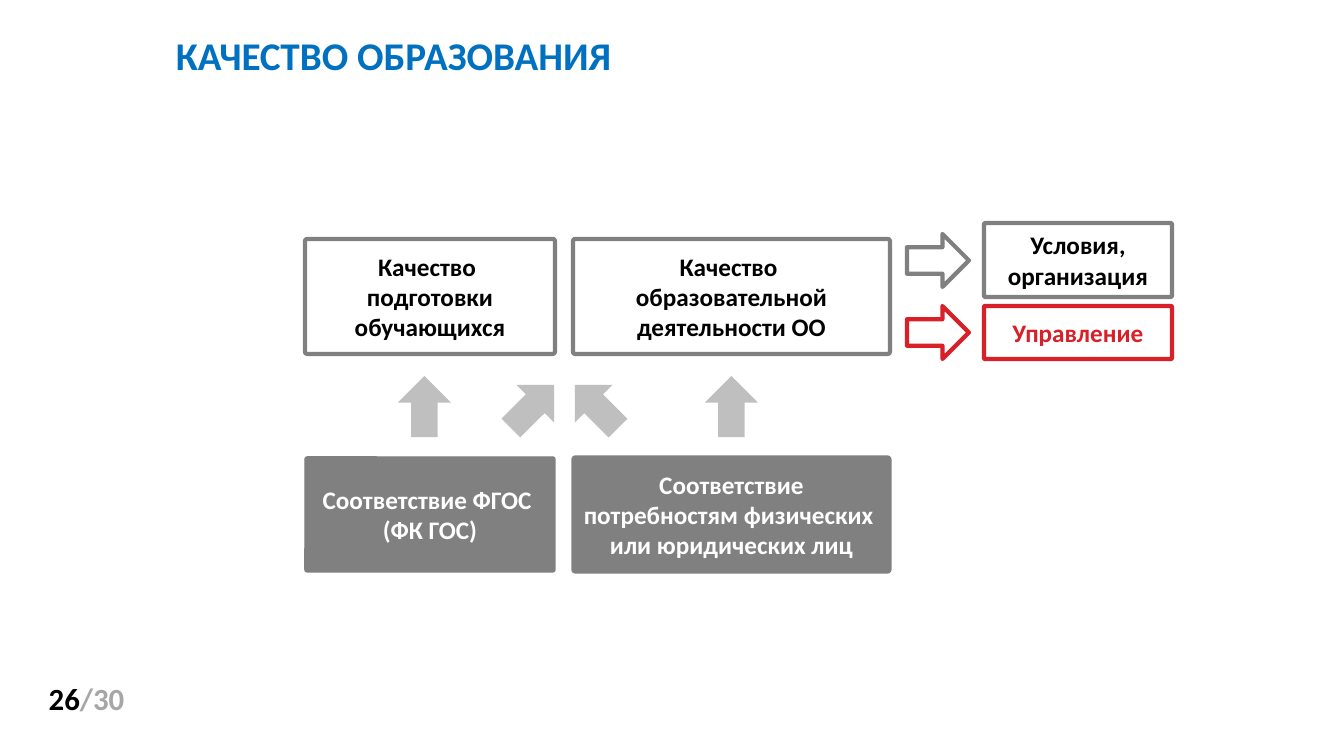
from pptx import Presentation
from pptx.dml.color import RGBColor
from pptx.enum.shapes import MSO_SHAPE
from pptx.enum.text import MSO_ANCHOR, PP_ALIGN
from pptx.util import Emu, Pt

PX = 914400 / 100.8
ROUNDED = MSO_SHAPE.ROUNDED_RECTANGLE
ARROW = MSO_SHAPE.RIGHT_ARROW
MIDDLE = MSO_ANCHOR.MIDDLE
CENTER = PP_ALIGN.CENTER
COLORS = {
    "title": "0070C0",
    "black": "000000",
    "white": "FFFFFF",
    "gray": "808080",
    "light": "BFBFBF",
    "total": "A6A6A6",
    "red": "D82028",
}
COLUMNS = [
    (305, 250, ["Качество ", "подготовки обучающихся"],
     ["Соответствие ФГОС ", "(ФК ГОС)"], 1),
    (573, 317, ["Качество ", "образовательной деятельности ОО"],
     ["Соответствие потребностям физических ", "или юридических лиц"], 2.25),
]
UP_ARROWS = [(89, 270), (197, 315), (261, 225), (396, 270)]
OUTCOMES = [
    ("Условия, организация", 0, 74, 11, "gray", "black"),
    ("Управление", 83, 53, 83, "red", "red"),
]


def px(value):
    """Turn a length in px into EMU."""
    return Emu(round(value * PX))


def color(name):
    """Look up a named colour."""
    return RGBColor.from_string(COLORS[name])


def add_span(para, text, size, ink):
    """Append one bold run to a paragraph."""
    span = para.add_run()
    span.text = text
    span.font.name = "Calibri"
    span.font.size = Pt(size)
    span.font.bold = True
    span.font.color.rgb = color(ink)


def add_preset(page, preset, box, fill=None, line=None, width=3):
    """Place a flat preset shape in a box."""
    shape = page.shapes.add_shape(preset, *map(px, box))
    shape.shadow.inherit = False
    if fill:
        shape.fill.solid()
        shape.fill.fore_color.rgb = color(fill)
    else:
        shape.fill.background()
    if line:
        shape.line.color.rgb = color(line)
        shape.line.width = Pt(width)
    else:
        shape.line.fill.background()
    return shape


def add_card(page, box, lines, fill, line, ink, width=3):
    """Place a rounded card with centred lines of text."""
    card = add_preset(page, ROUNDED, box, fill, line, width)
    card.adjustments[0] = 0.02
    frame = card.text_frame
    frame.word_wrap = True
    frame.vertical_anchor = MIDDLE
    frame.margin_left = frame.margin_right = px(8)
    frame.margin_top = frame.margin_bottom = px(4)
    for index, text in enumerate(lines):
        para = frame.add_paragraph() if index else frame.paragraphs[0]
        para.alignment = CENTER
        add_span(para, text, 18, ink)


def add_text_box(page, box):
    """Place a wrapping text box and return its first paragraph."""
    frame = page.shapes.add_textbox(*map(px, box)).text_frame
    frame.word_wrap = True
    return frame.paragraphs[0]


def add_title(page, box):
    """Write the heading."""
    para = add_text_box(page, box)
    para.line_spacing = Pt(28)
    para.space_after = Pt(12)
    add_span(para, "КАЧЕСТВО ОБРАЗОВАНИЯ", 28, "title")


def add_page_number(page, box):
    """Write the page number and the page total."""
    para = add_text_box(page, box)
    para.alignment = CENTER
    add_span(para, "26", 22, "black")
    add_span(para, "/30", 22, "total")


def add_quality_grid(page, box):
    """Stack qualities over requirements, joined by upward arrows."""
    left, top, _, height = box
    card_height = 115
    for x, width, quality, requirement, line_width in COLUMNS:
        add_card(page, (x, top, width, card_height), quality,
                 "white", "gray", "black")
        add_card(page, (x, top + height - card_height, width, card_height),
                 requirement, "gray", "gray", "white", line_width)
    for offset, angle in UP_ARROWS:
        arrow = add_preset(page, ARROW, (left + offset, top + 141, 61, 53), "light")
        arrow.rotation = angle


def add_outcomes(page, box):
    """List the outcomes, each led by an outlined arrow."""
    left, top, width, _ = box
    card_width = 188
    for text, offset, height, arrow_offset, line, ink in OUTCOMES:
        add_preset(page, ARROW, (left, top + arrow_offset, 62, 53), line=line)
        add_card(page, (left + width - card_width, top + offset, card_width, height),
                 [text], "white", line, ink)


def main():
    """Build and save the deck."""
    deck = Presentation()
    deck.slide_width, deck.slide_height = px(1344), px(756)
    page = deck.slides.add_slide(deck.slide_layouts[6])
    add_title(page, (166, 34, 1153, 540))
    add_page_number(page, (29, 675, 115, 47))
    add_quality_grid(page, (305, 239, 585, 333))
    add_outcomes(page, (907, 223, 265, 136))
    deck.save("out.pptx")


if __name__ == "__main__":
    main()
